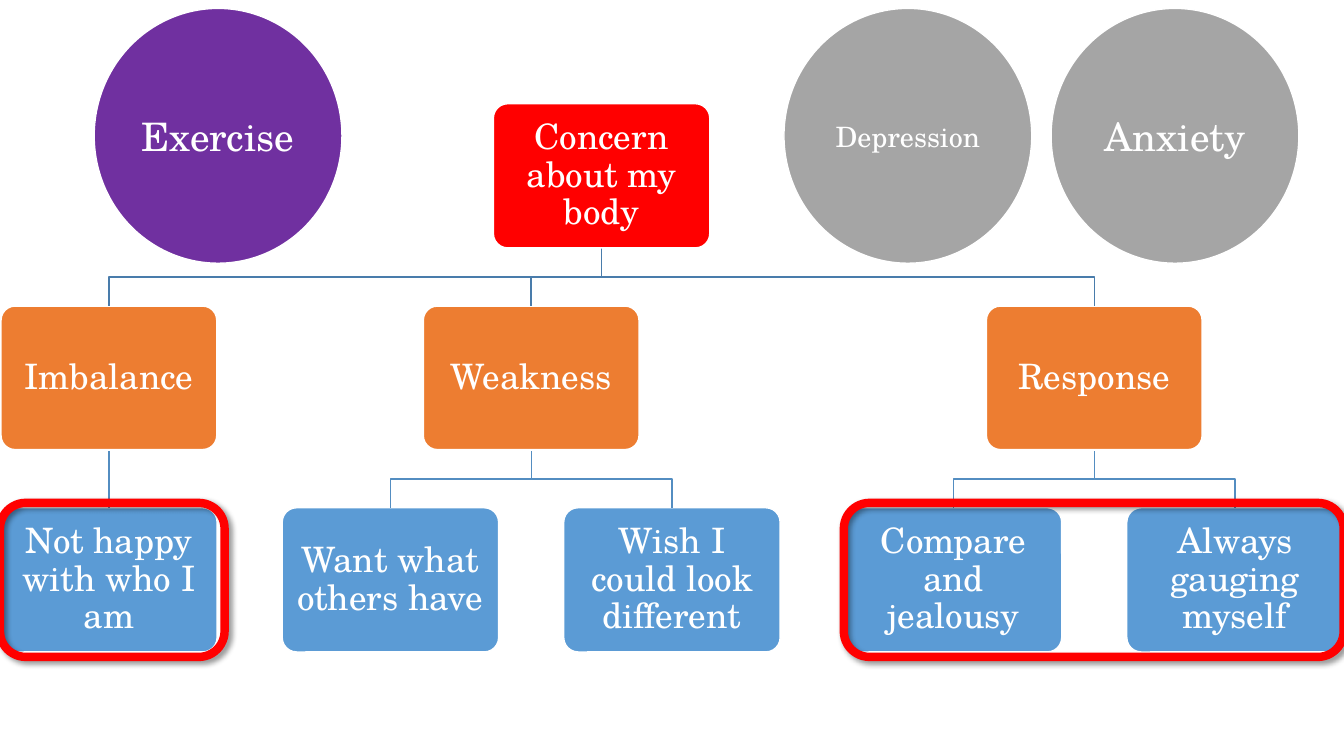
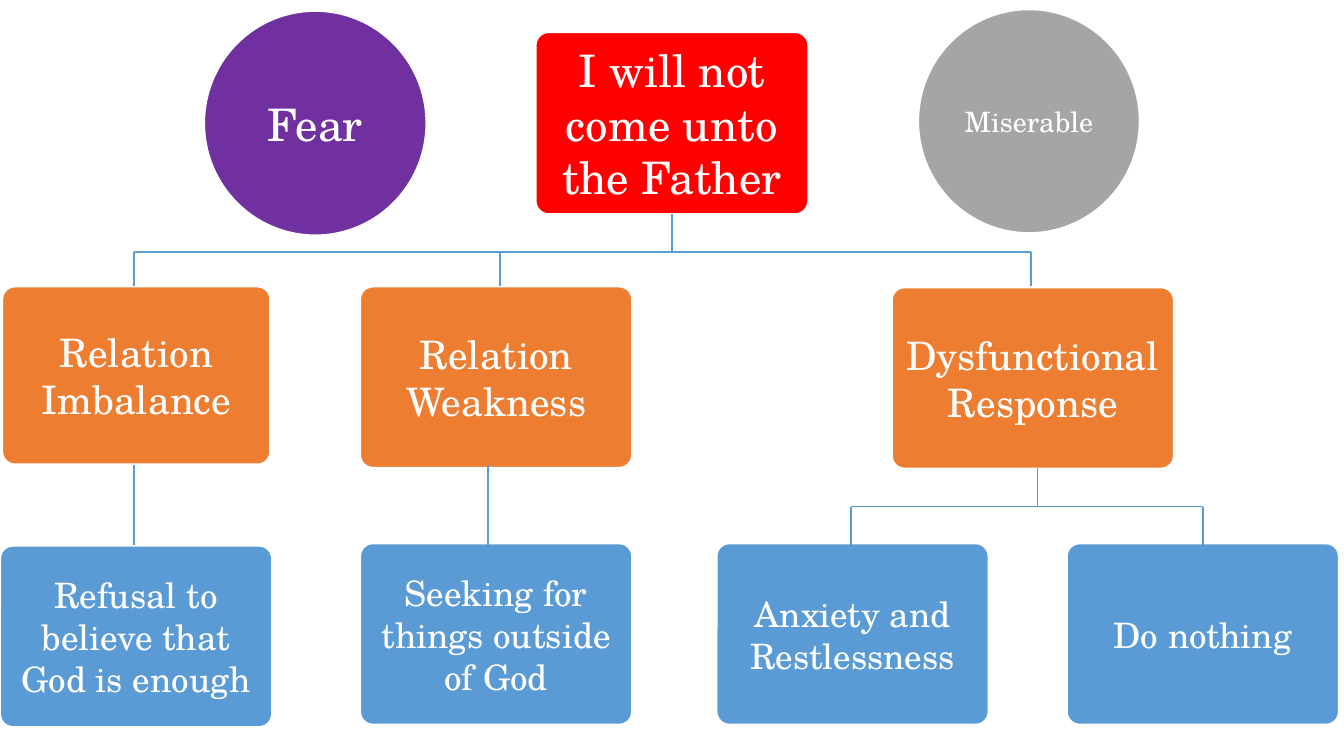
from dataclasses import dataclass
from itertools import count
from typing import Iterator

import pptx
import pptx.dml.color
import pptx.enum.shapes
import pptx.enum.text
import pptx.oxml
import pptx.oxml.ns
import pptx.util
from pptx.shapes.autoshape import Shape
from pptx.slide import Slide

Pt = pptx.util.Pt
SHAPE = pptx.enum.shapes.MSO_SHAPE

FONT = "TeX Gyre Schola"
WHITE = "FFFFFF"
RED = "FF0000"
ORANGE = "ED7D31"
BLUE = "5B9BD5"
PURPLE = "7030A0"
GRAY = "A5A5A5"

NODE_W, NODE_H = 154.6, 103
FIRST_LEAF_X, LEAF_STEP = 77.8, 201.1
FIRST_LEVEL_Y, LEVEL_STEP = 74.1, 144.3
LINK_MARGIN = 3.6
LEVEL_FILLS = (RED, ORANGE, BLUE)
LEVEL_BORDERS = (1, 1.5, 1)
LEVEL_LINES = ("497CAB", "538DC1")

SHADOW = (
    '<a:effectLst xmlns:a="http://schemas.openxmlformats.org/drawingml/2006/main">'
    '<a:outerShdw blurRad="50800" dist="38100" dir="2700000" algn="tl" rotWithShape="0">'
    '<a:srgbClr val="000000"><a:alpha val="40000"/></a:srgbClr>'
    "</a:outerShdw></a:effectLst>"
)


@dataclass(frozen=True)
class Box:
    text: str
    x: float
    y: float
    w: float
    h: float
    fill: str
    size: float
    border: float = 1.5
    radius: float = 0.071
    spacing: float = 1.0


@dataclass(frozen=True)
class Circle:
    text: str
    x: float
    y: float
    w: float
    h: float
    fill: str
    size: float
    border: float = 1


@dataclass(frozen=True)
class Ring:
    x: float
    y: float
    w: float
    h: float


@dataclass(frozen=True)
class Branch:
    x: float
    top: float
    bar: float
    bottom: float
    drops: tuple[float, ...]


@dataclass(frozen=True)
class Node:
    text: str
    children: tuple["Node", ...] = ()


CONCERN = Node("Concern about my body", (
    Node("Imbalance", (Node("Not happy with who I am"),)),
    Node("Weakness", (Node("Want what others have"), Node("Wish I could look different"))),
    Node("Response", (Node("Compare and jealousy"), Node("Always gauging myself"))),
))
CONCERN_CIRCLES = (
    Circle("Depression", 560, 6, 177, 182, GRAY, 20),
    Circle("Anxiety", 750.8, 6, 177, 182, GRAY, 28),
    Circle("Exercise", 67.3, 6, 177, 182, PURPLE, 28),
)
CONCERN_RINGS = (Ring(602.8, 359.2, 357, 110), Ring(0, 359.2, 160.4, 110))

FATHER_BRANCHES = (
    Branch(480, 152.6, 180, 204, (95.8, 357.2, 736.4)),
    Branch(95.8, 332, 360, 389.5, (95.8,)),
    Branch(348.5, 332, 360, 389.5, (348.5,)),
    Branch(741.3, 334.6, 361.8, 389.5, (607.8, 859.2)),
)
FATHER_BOXES = (
    Box("I will not come unto the Father", 382.8, 23.2, 194.4, 129.6, RED, 32, 1),
    Box("Relation Imbalance", 1.6, 204.6, 191.5, 127.2, ORANGE, 28),
    Box("Relation Weakness", 257.2, 204.6, 194.4, 129.6, ORANGE, 28),
    Box("Dysfunctional Response", 637, 205.2, 201.6, 129.6, ORANGE, 28),
    Box("Refusal to believe that God is enough", 0, 389.8, 194.4, 129.6, BLUE, 25),
    Box("Seeking for things outside of God", 257.2, 388.1, 194.4, 129.6, BLUE, 25),
    Box("Anxiety and Restlessness", 511.8, 388.1, 194.4, 129.6, BLUE, 25),
    Box("Do nothing", 762, 388.1, 194.4, 129.6, BLUE, 25),
)
FATHER_CIRCLES = (
    Circle("Miserable", 655.8, 6.6, 158.4, 160, GRAY, 20, 1.5),
    Circle("Fear", 146, 8, 158.4, 160, PURPLE, 32),
)


def rgb(value: str) -> pptx.dml.color.RGBColor:
    return pptx.dml.color.RGBColor.from_string(value)


def add_filled(s: Slide, kind: SHAPE, item: Box | Circle) -> Shape:
    sp = s.shapes.add_shape(kind, Pt(item.x), Pt(item.y), Pt(item.w), Pt(item.h))
    sp.shadow.inherit = False
    sp.fill.solid()
    sp.fill.fore_color.rgb = rgb(item.fill)
    sp.line.color.rgb = rgb(WHITE)
    sp.line.width = Pt(item.border)
    tf = sp.text_frame
    tf.word_wrap = True
    tf.vertical_anchor = pptx.enum.text.MSO_ANCHOR.MIDDLE
    tf.text = item.text
    p = tf.paragraphs[0]
    p.alignment = pptx.enum.text.PP_ALIGN.CENTER
    r = p.runs[0]
    r.font.name = FONT
    r.font.size = Pt(item.size)
    r.font.color.rgb = rgb(WHITE)
    return sp


def add_box(s: Slide, box: Box) -> None:
    sp = add_filled(s, SHAPE.ROUNDED_RECTANGLE, box)
    sp.adjustments[0] = box.radius
    sp.text_frame.paragraphs[0].line_spacing = box.spacing


def add_circle(s: Slide, circle: Circle) -> None:
    add_filled(s, SHAPE.OVAL, circle)


def add_ring(s: Slide, ring: Ring) -> None:
    sp = s.shapes.add_shape(
        SHAPE.ROUNDED_RECTANGLE, Pt(ring.x), Pt(ring.y), Pt(ring.w), Pt(ring.h)
    )
    sp.fill.background()
    sp.line.color.rgb = rgb(RED)
    sp.line.width = Pt(6)
    sp.element.spPr.append(pptx.oxml.parse_xml(SHADOW))


def add_line(s: Slide, x1: float, y1: float, x2: float, y2: float) -> None:
    line = s.shapes.add_connector(
        pptx.enum.shapes.MSO_CONNECTOR.STRAIGHT, Pt(x1), Pt(y1), Pt(x2), Pt(y2)
    )
    line.line.color.rgb = rgb(BLUE)
    line.line.width = Pt(1)
    spPr = line.element.spPr
    spPr.append(spPr.makeelement(pptx.oxml.ns.qn("a:effectLst"), {}))


def add_branch(s: Slide, b: Branch) -> None:
    if b.drops == (b.x,):
        add_line(s, b.x, b.top, b.x, b.bottom)
        return
    add_line(s, b.x, b.top, b.x, b.bar)
    add_line(s, min(b.drops), b.bar, max(b.drops), b.bar)
    for x in b.drops:
        add_line(s, x, b.bar, x, b.bottom)


def add_link(s: Slide, x1: float, y1: float, x2: float, y2: float, color: str) -> None:
    if x1 == x2:
        path = s.shapes.build_freeform(Pt(x1 - LINK_MARGIN), Pt(y1))
        path.move_to(Pt(x1), Pt(y1))
        path.add_line_segments([(Pt(x2), Pt(y2))], close=False)
        path.move_to(Pt(x2 + LINK_MARGIN), Pt(y2))
    else:
        bar = Pt((y1 + y2) / 2)
        path = s.shapes.build_freeform(Pt(x1), Pt(y1))
        path.add_line_segments(
            [(Pt(x1), bar), (Pt(x2), bar), (Pt(x2), Pt(y2))], close=False
        )
    sp = path.convert_to_shape()
    sp.shadow.inherit = False
    sp.fill.background()
    sp.line.color.rgb = rgb(color)
    sp.line.width = Pt(1)


def add_tree(s: Slide, node: Node, leaves: Iterator[int], level: int = 0) -> float:
    y = FIRST_LEVEL_Y + level * LEVEL_STEP
    if node.children:
        drops = [add_tree(s, child, leaves, level + 1) for child in node.children]
        x = (drops[0] + drops[-1]) / 2
        for drop in drops:
            add_link(s, x, y + NODE_H, drop, y + LEVEL_STEP, LEVEL_LINES[level])
    else:
        x = FIRST_LEAF_X + next(leaves) * LEAF_STEP
    add_box(s, Box(node.text, x - NODE_W / 2, y, NODE_W, NODE_H, LEVEL_FILLS[level], 25,
                   LEVEL_BORDERS[level], 0.1, 0.9))
    return x


def build_concern(s: Slide) -> None:
    add_tree(s, CONCERN, count())
    for ring in CONCERN_RINGS:
        add_ring(s, ring)
    for circle in CONCERN_CIRCLES:
        add_circle(s, circle)


def build_father(s: Slide) -> None:
    for box in FATHER_BOXES:
        add_box(s, box)
    for branch in FATHER_BRANCHES:
        add_branch(s, branch)
    for circle in FATHER_CIRCLES:
        add_circle(s, circle)


def main() -> None:
    prs = pptx.Presentation()
    prs.slide_width, prs.slide_height = Pt(960), Pt(540)
    for build in (build_concern, build_father):
        build(prs.slides.add_slide(prs.slide_layouts[6]))
    prs.save("out.pptx")


if __name__ == "__main__":
    main()
